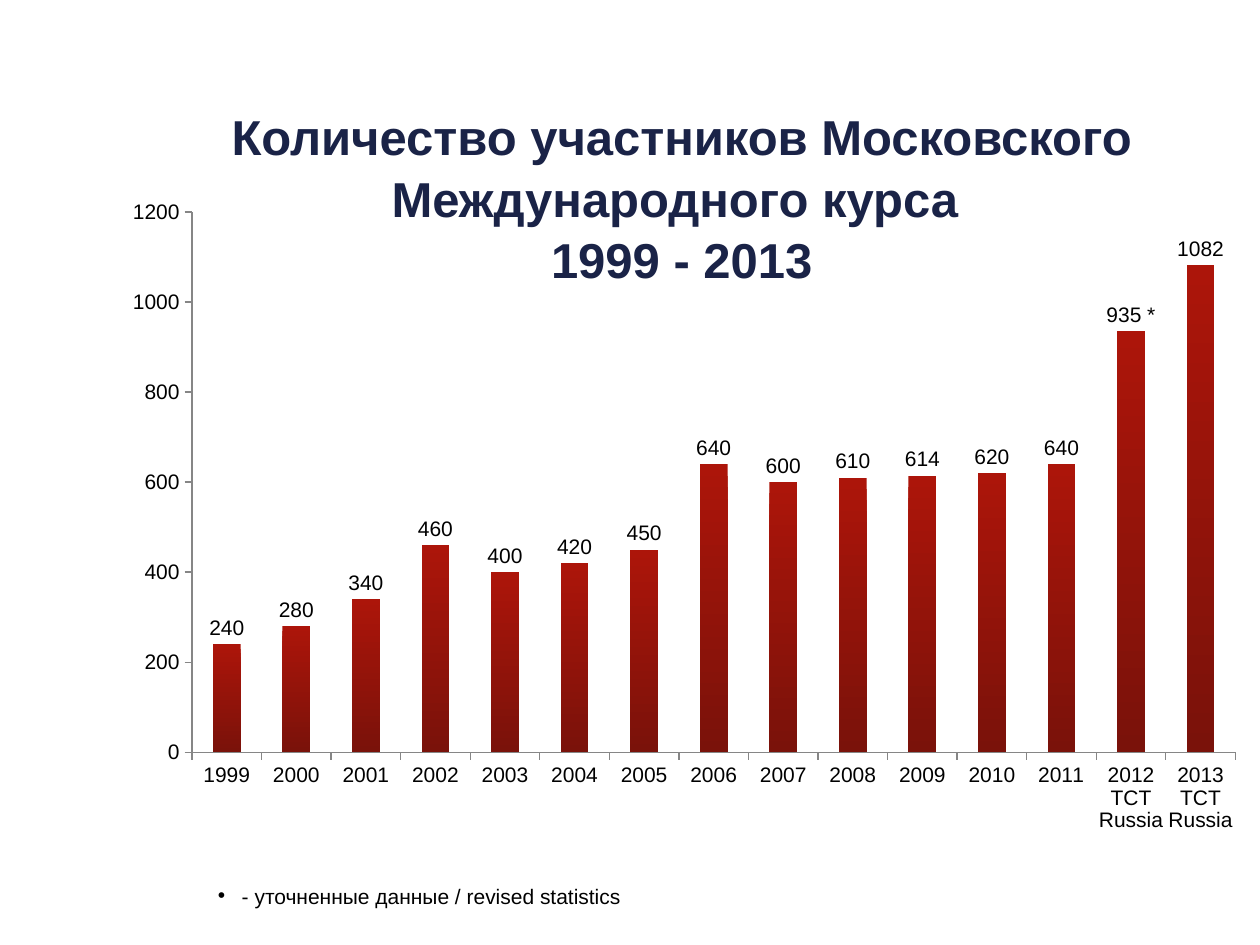
from lxml import etree
from pptx import Presentation
from pptx import util as u
from pptx.chart.data import CategoryChartData
from pptx.dml.color import RGBColor
from pptx.enum import chart as ch, text
from pptx.oxml import parse_xml
from pptx.oxml.ns import nsdecls, qn

FONT = "Arial"
BLACK = "000000"
PARTICIPANTS = [240, 280, 340, 460, 400, 420, 450, 640,
                600, 610, 614, 620, 640, 935, 1082]
YEARS = [str(year) for year in range(1999, 2012)]
YEARS += ["2012 TCT Russia", "2013 TCT Russia"]


def rgb(value):
    return RGBColor.from_string(value)


def style(font, size, color=BLACK, bold=False):
    font.name = FONT
    font.size = u.Pt(size)
    font.bold = bold
    font.color.rgb = rgb(color)


def inches(box):
    return [u.Inches(length) for length in box]


def add_heading(slide, box):
    heading = slide.shapes.title
    heading.left, heading.top, heading.width, heading.height = inches(box)
    frame = heading.text_frame
    frame.auto_size = text.MSO_AUTO_SIZE.NONE
    frame.word_wrap = True
    frame.vertical_anchor = text.MSO_ANCHOR.TOP
    frame.margin_left = frame.margin_right = u.Inches(0.05)
    frame.margin_top = frame.margin_bottom = u.Inches(0.05)
    lines = ["Количество участников Московского Международного курса ", "1999 - 2013"]
    for index, line in enumerate(lines):
        paragraph = frame.add_paragraph() if index else frame.paragraphs[0]
        paragraph.alignment = text.PP_ALIGN.CENTER
        paragraph.line_spacing = 1.05
        run = paragraph.add_run()
        run.text = line
        style(run.font, 28, "1A2347", True)


def set_plot_area(chart, **fractions):
    plot_area = chart._chartSpace.chart.plotArea
    for layout in plot_area.findall(qn("c:layout")):
        plot_area.remove(layout)
    values = "".join(f'<c:{name} val="{value}"/>' for name, value in fractions.items())
    plot_area.insert(0, parse_xml(
        f'<c:layout {nsdecls("c")}><c:manualLayout><c:layoutTarget val="inner"/>'
        f'<c:xMode val="edge"/><c:yMode val="edge"/>{values}'
        '</c:manualLayout></c:layout>'))


def add_participants_chart(slide, box):
    data = CategoryChartData()
    data.categories = YEARS
    data.add_series("Series 1", PARTICIPANTS)
    chart = slide.shapes.add_chart(
        ch.XL_CHART_TYPE.COLUMN_CLUSTERED, *inches(box), data).chart
    chart.has_legend = False
    chart.has_title = False
    style(chart.font, 18)
    set_plot_area(chart, x=0.073, y=0.029, w=0.91, h=0.809)

    for axis in (chart.category_axis, chart.value_axis):
        axis.has_major_gridlines = False
        axis.major_tick_mark = ch.XL_TICK_MARK.OUTSIDE
        axis.minor_tick_mark = ch.XL_TICK_MARK.NONE
        axis.format.line.color.rgb = rgb("868686")
        axis.format.line.width = u.Pt(0.75)
        style(axis.tick_labels.font, 12)
    chart.value_axis.minimum_scale = 0
    chart.value_axis.maximum_scale = 1200
    chart.value_axis.major_unit = 200

    plot = chart.plots[0]
    plot.gap_width = 150
    plot.vary_by_categories = False
    columns = plot.series[0]
    columns.invert_if_negative = False
    fill = columns.format.fill
    fill.gradient()
    fill.gradient_angle = 270
    for stop, color in zip(fill.gradient_stops, ("AC150A", "7A120A")):
        stop.color.rgb = rgb(color)

    labels = columns.data_labels
    labels.show_value = True
    labels.position = ch.XL_LABEL_POSITION.OUTSIDE_END
    style(labels.font, 12)
    revised = columns.points[YEARS.index("2012 TCT Russia")].data_label
    run = revised.text_frame.paragraphs[0].add_run()
    run.text = "935 *"
    style(run.font, 12)
    revised.position = ch.XL_LABEL_POSITION.OUTSIDE_END


def add_footnote(slide, box):
    frame = slide.shapes.add_textbox(*inches(box)).text_frame
    frame.word_wrap = True
    frame.auto_size = text.MSO_AUTO_SIZE.SHAPE_TO_FIT_TEXT
    paragraph = frame.paragraphs[0]
    properties = paragraph._p.get_or_add_pPr()
    properties.set("marL", str(u.Inches(0.19)))
    properties.set("indent", str(u.Inches(-0.19)))
    etree.SubElement(properties, qn("a:buFont")).set("typeface", FONT)
    etree.SubElement(properties, qn("a:buChar")).set("char", "•")
    run = paragraph.add_run()
    run.text = "- уточненные данные / revised statistics"
    style(run.font, 12)


def main():
    deck = Presentation()
    deck.slide_width, deck.slide_height = inches((10, 7.5))
    slide = deck.slides.add_slide(deck.slide_layouts[5])
    add_heading(slide, (1.16, 0.77, 8.5, 1.03))
    add_participants_chart(slide, (0.86, 1.53, 9.1, 5.3))
    add_footnote(slide, (1.63, 6.96, 6.41, 0.3))
    deck.save("out.pptx")


if __name__ == "__main__":
    main()
